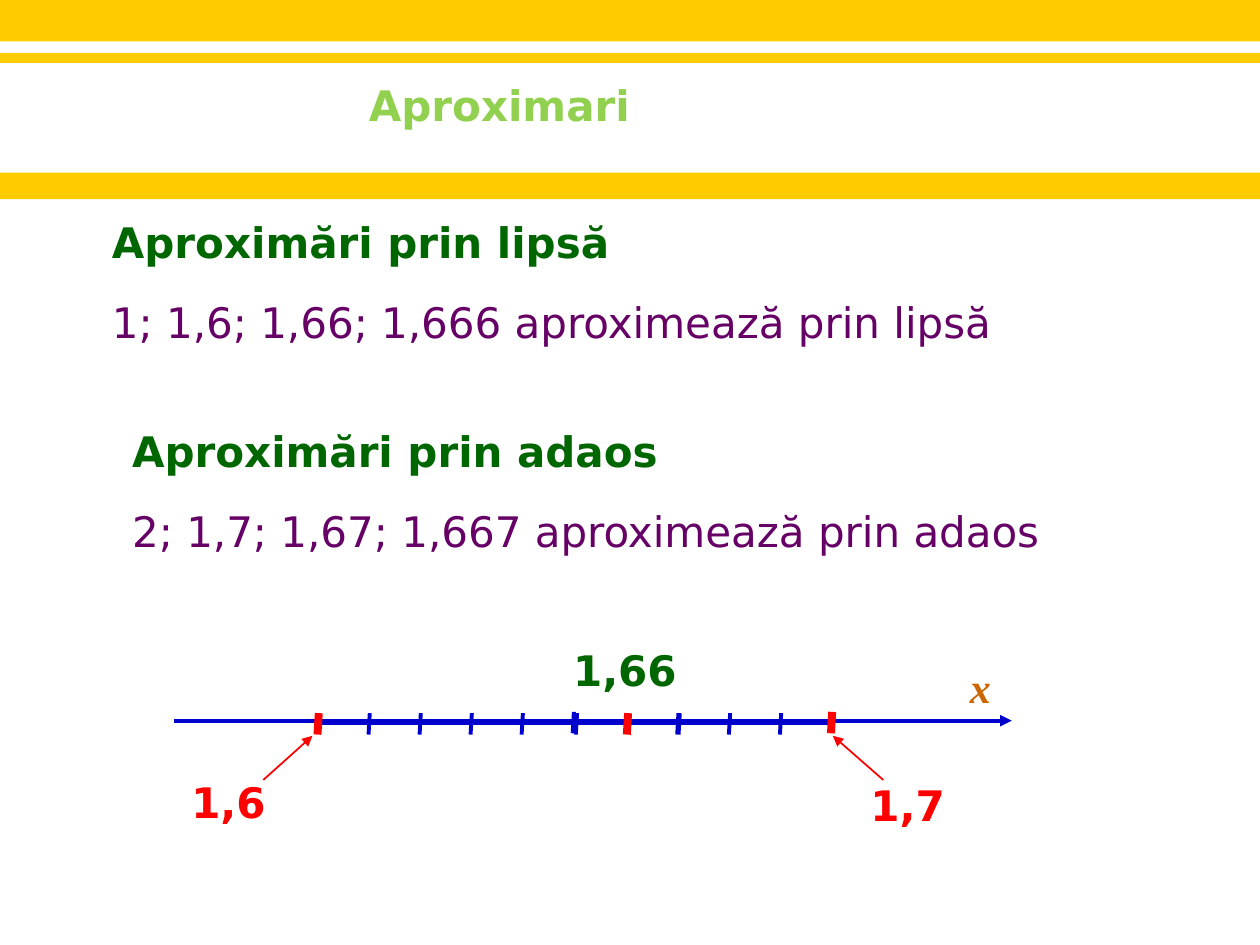
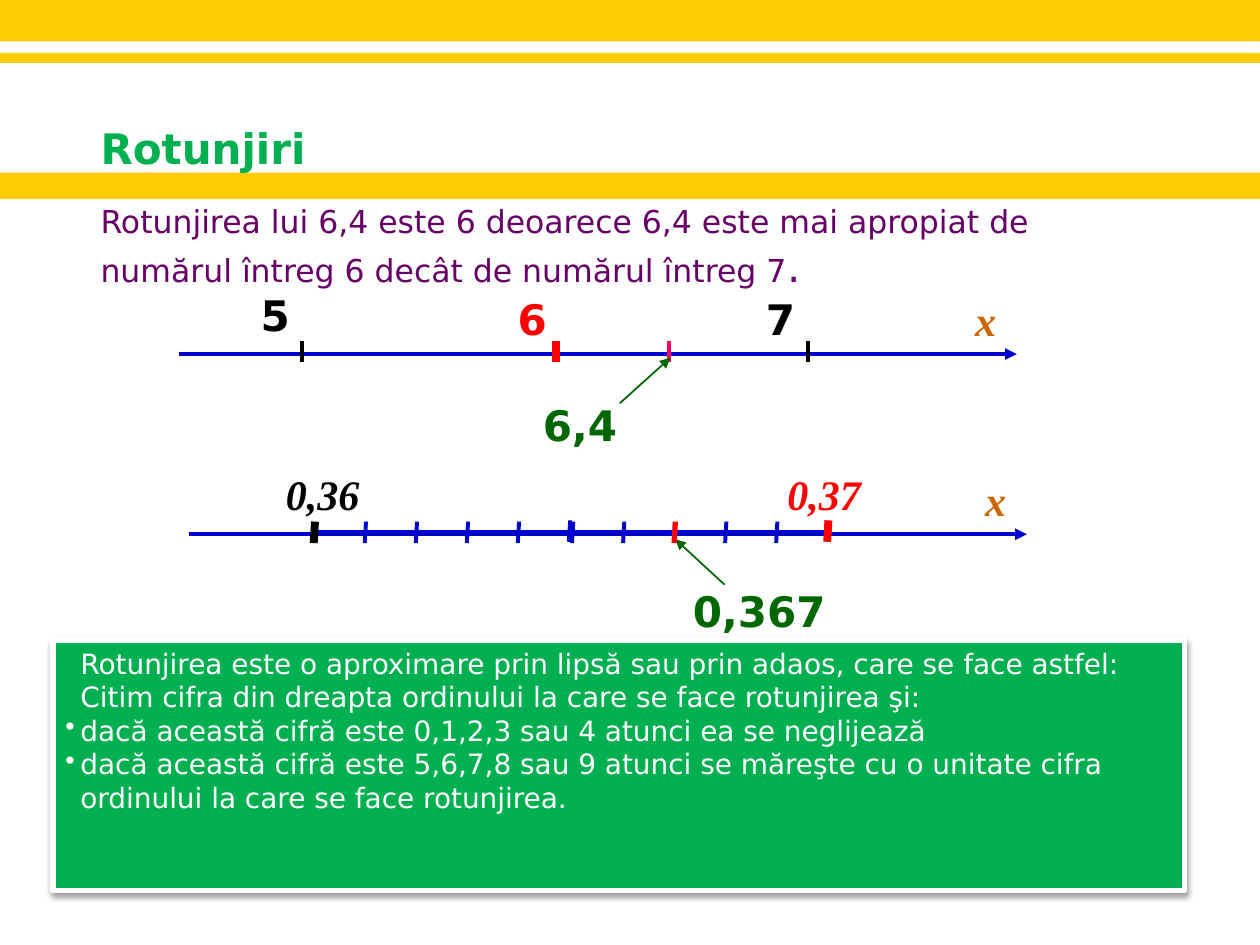
"""Build two slides on decimal approximation and rounding, with number lines."""
from lxml import etree
from pptx import Presentation
from pptx.dml.color import RGBColor
from pptx.enum.shapes import MSO_CONNECTOR, MSO_SHAPE
from pptx.enum.text import MSO_ANCHOR, PP_ALIGN
from pptx.oxml.ns import qn
from pptx.util import Inches, Pt

RECT = MSO_SHAPE.RECTANGLE
STRAIGHT = MSO_CONNECTOR.STRAIGHT
TOP = MSO_ANCHOR.TOP
LEFT = PP_ALIGN.LEFT
SANS, SERIF = "DejaVu Sans", "Times New Roman"
COLORS = {
    "band": "FFCC00", "axis": "0000CC", "variable": "CC6600",
    "heading": "006600", "body": "660066", "lime": "92D050",
    "green": "00B050", "red": "FF0000", "pink": "FF0066",
    "black": "000000", "white": "FFFFFF",
}
BANDS = [(0, 0.33), (1.37, 0.21), (0.42, 0.08)]
BODY_GAP = 17
INDENT = 0.12


class Deck:
    def __init__(self):
        self.prs = Presentation()
        self.prs.slide_width, self.prs.slide_height = Inches(10), Inches(7.5)
        self.s = None

    def color(self, name):
        return RGBColor.from_string(COLORS[name])

    def new_slide(self):
        self.s = self.prs.slides.add_slide(self.prs.slide_layouts[6])
        for top, height in BANDS:
            self.rect(0, top, 10, height, "band")

    def rect(self, x, y, w, h, fill):
        sp = self.s.shapes.add_shape(RECT, Inches(x), Inches(y), Inches(w), Inches(h))
        sp.shadow.inherit = False
        sp.fill.solid()
        sp.fill.fore_color.rgb = self.color(fill)
        sp.line.fill.background()
        return sp

    def run(self, p, text, color, size=24, bold=False, font=SANS, italic=False):
        r = p.add_run()
        r.text = text
        r.font.name, r.font.size = font, Pt(size)
        r.font.bold, r.font.italic = bold, italic
        r.font.color.rgb = self.color(color)

    def indent(self, p, bullet=False):
        pPr = p._p.get_or_add_pPr()
        pPr.set("marL", str(Inches(INDENT)))
        pPr.set("indent", str(Inches(-INDENT if bullet else 0)))
        if bullet:
            etree.SubElement(pPr, qn("a:buChar")).set("char", "•")

    def text_box(self, x, y, w, h):
        sp = self.s.shapes.add_textbox(Inches(x), Inches(y), Inches(w), Inches(h))
        sp.text_frame.word_wrap = True
        return sp.text_frame

    def label(self, text, x, y, color, w=0.83, math=False):
        p = self.text_box(x, y, w, 0.5).paragraphs[0]
        self.run(p, text, color, bold=True, font=SERIF if math else SANS, italic=math)

    def section(self, x, y, w, h, heading, body, color="heading"):
        tf = self.text_box(x, y, w, h)
        p = tf.paragraphs[0]
        self.indent(p)
        self.run(p, heading, color, bold=True)
        p = tf.add_paragraph()
        p.space_before = Pt(BODY_GAP)
        self.indent(p)
        for text, size in body:
            self.run(p, text, "body", size)

    def panel(self, x, y, w, h, items):
        sp = self.rect(x, y, w, h, "green")
        sp.line.color.rgb = self.color("white")
        sp.line.width = Pt(3)
        effects = sp._element.spPr.find(qn("a:effectLst"))
        shadow = etree.SubElement(effects, qn("a:outerShdw"), blurRad=str(Pt(3.1)),
                                  dist=str(Pt(1.6)), dir="5400000", rotWithShape="0")
        tint = etree.SubElement(shadow, qn("a:srgbClr"), val=COLORS["black"])
        etree.SubElement(tint, qn("a:alpha"), val="38000")
        tf = sp.text_frame
        tf.word_wrap, tf.vertical_anchor = True, TOP
        for i, (text, bullet) in enumerate(items):
            p = tf.add_paragraph() if i else tf.paragraphs[0]
            p.alignment = LEFT
            self.indent(p, bullet)
            self.run(p, text, "white", 16)

    def line(self, x1, y1, x2, y2, color="axis", width=2.25, arrow=False):
        sp = self.s.shapes.add_connector(STRAIGHT, Inches(x1), Inches(y1),
                                         Inches(x2), Inches(y2))
        sp.line.color.rgb = self.color(color)
        sp.line.width = Pt(width)
        if arrow:
            etree.SubElement(sp.line._get_or_add_ln(), qn("a:tailEnd"), type="triangle")
        etree.SubElement(sp._element.spPr, qn("a:effectLst"))

    def axis(self, x, y):
        self.line(x, y, x + 6.65, y, arrow=True)
        self.label("x", x + 6.22, y - 0.52, "variable", 0.43, math=True)

    def tenths(self, x, y, marks):
        """Draw two runs of five segments; marks maps tick number to colour and width."""
        for half in range(2):
            start = x + 2.05 * half
            for i in range(6):
                tick = start + 0.405 * i
                lift = 0.01 if i == 5 else 0
                if i < 5:
                    self.line(tick + 0.41, y, tick - 0.01, y)
                color, width = marks.get(6 * half + i, ("axis", 2.25))
                self.line(tick, y - 0.08 - lift, tick - 0.01, y + 0.09 - lift, color, width)


def approximations(deck):
    deck.new_slide()
    sections = [(0.67, 1.67, "lipsă", "1; 1,6; 1,66; 1,666"),
                (0.83, 3.33, "adaos", "2; 1,7; 1,67; 1,667")]
    for x, y, kind, values in sections:
        deck.section(x, y, 8.31, 1.14, f"Aproximări prin {kind}",
                     [(f"{values} aproximează prin {kind}", 24)])
    deck.label("1,66", 4.45, 5.07, "heading", 1.22)
    deck.label("1,6", 1.42, 6.11, "red")
    deck.line(2.09, 6.19, 2.48, 5.84, "red", 1, arrow=True)
    deck.label("1,7", 6.81, 6.14, "red")
    deck.line(7.01, 6.19, 6.61, 5.84, "red", 1, arrow=True)
    deck.axis(1.38, 5.72)
    deck.tenths(2.53, 5.74, {0: ("red", 4.5), 7: ("red", 4.5),
                             8: ("axis", 3), 11: ("red", 4.5)})
    deck.label("Aproximari", 2.83, 0.58, "lime", 2.3)


def rounding(deck):
    deck.new_slide()
    deck.section(0.58, 0.92, 8.66, 1.45, "Rotunjiri", [
        ("Rotunjirea lui 6,4 este 6 deoarece 6,4 este mai apropiat de "
         "numărul întreg 6 decât de numărul întreg 7", 18), (".", 24)], "green")
    deck.panel(0.42, 5.08, 8.98, 1.99, [
        ("Rotunjirea este o aproximare prin lipsă sau prin adaos, care se face astfel:", False),
        ("Citim cifra din dreapta ordinului la care se face rotunjirea şi:", False),
        ("dacă această cifră este 0,1,2,3 sau 4 atunci ea se neglijează", True),
        ("dacă această cifră este 5,6,7,8 sau 9 atunci se măreşte cu o unitate cifra "
         "ordinului la care se face rotunjirea.", True)])

    deck.axis(1.42, 2.81)
    for x, color, width in [(6.41, "black", 2.25), (2.4, "black", 2.25),
                            (4.41, "red", 4.5), (5.31, "pink", 2.25)]:
        deck.line(x, 2.71, x, 2.87, color, width)
    deck.label("5", 1.97, 2.25, "black")
    deck.label("6", 4.01, 2.28, "red")
    deck.label("7", 5.98, 2.28, "black")
    deck.label("6,4", 4.21, 3.12, "heading")
    deck.line(4.92, 3.2, 5.32, 2.84, "heading", 1, arrow=True)

    deck.axis(1.5, 4.24)
    deck.label("0,37", 6.15, 3.67, "red", math=True)
    deck.label("0,36", 2.17, 3.67, "black", math=True)
    deck.label("0,367", 5.4, 4.6, "heading", 1.44)
    deck.line(5.75, 4.64, 5.36, 4.28, "heading", 1, arrow=True)
    deck.tenths(2.5, 4.22, {0: ("black", 4.5), 8: ("red", 3), 11: ("red", 4.5)})


def main():
    deck = Deck()
    approximations(deck)
    rounding(deck)
    deck.prs.save("out.pptx")


if __name__ == "__main__":
    main()
